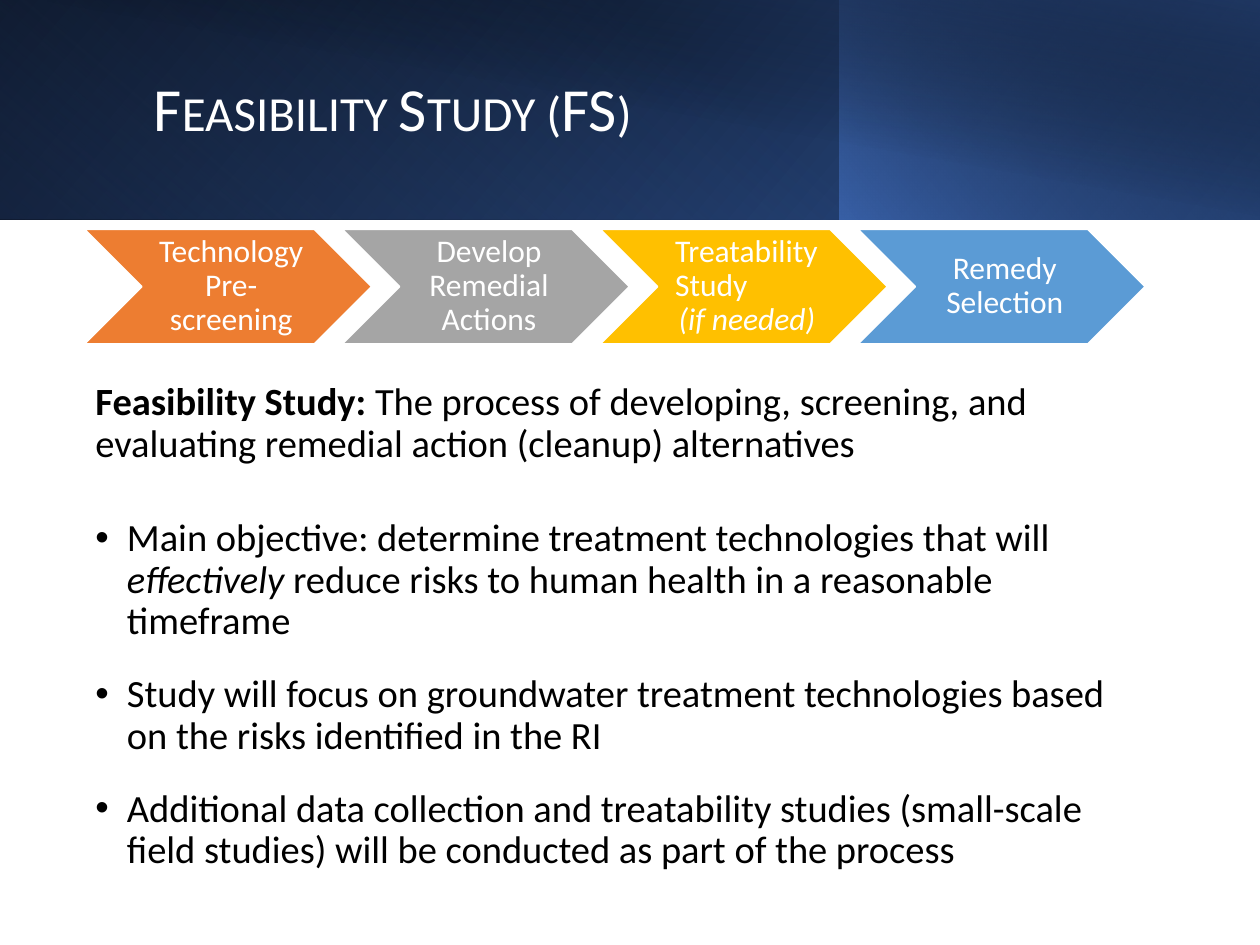
from lxml import etree
from pptx import Presentation
from pptx.dml.color import RGBColor
from pptx.enum.shapes import MSO_SHAPE
from pptx.enum.text import MSO_ANCHOR, MSO_AUTO_SIZE, PP_ALIGN
from pptx.oxml.ns import qn
from pptx.util import Inches, Pt

RECT, CHEVRON = MSO_SHAPE.RECTANGLE, MSO_SHAPE.CHEVRON
MIDDLE, NO_FIT = MSO_ANCHOR.MIDDLE, MSO_AUTO_SIZE.NONE
LEFT, CENTER = PP_ALIGN.LEFT, PP_ALIGN.CENTER

THEME = {
    "font": "Calibri", "white": "FFFFFF", "text": "000000",
    "title": 35, "body": 22, "step": 18,
    "black": "000000", "navy": "203864", "blue": "4472C4", "steel": "2F5597",
}

TITLE = "Feasibility Study (FS)"

# box, angle, stops of (position, colour, opacity)
BANNER = [
    ((0, 0, 10, 1.74), 40, [(0, "black", 100), (100, "steel", 100)]),
    ((0, 0, 6.66, 1.74), 130, [(20, "blue", 0), (100, "navy", 55)]),
    ((6.66, 0, 3.34, 1.74), 320, [(0, "blue", 66), (100, "black", 30)]),
    ((0.38, 0, 9.62, 1.75), 280, [(50, "black", 0), (99, "navy", 52)]),
]

STEPS = [
    ("ED7D31", [("Technology Pre-screening", {})]),
    ("A5A5A5", [("Develop Remedial Actions", {})]),
    ("FFC000", [("Treatability Study", {"align": LEFT, "indent": 0.06}),
                ([("(if needed)", "i")], {})]),
    ("5B9BD5", [("Remedy Selection", {})]),
]

DEFINITION = [
    ("Feasibility Study:", "b"),
    (" The process of developing, screening, and evaluating remedial action "
     "(cleanup) alternatives", ""),
]
BULLETS = [
    [("Main objective: determine treatment technologies that will ", ""),
     ("effectively", "i"),
     (" reduce risks to human health in a reasonable timeframe", "")],
    "Study will focus on groundwater treatment technologies based on the "
    "risks identified in the RI",
    "Additional data collection and treatability studies (small-scale field "
    "studies) will be conducted as part of the process",
]


def write(p, text, size, color, align=LEFT, before=0, after=0, indent=0,
          bullet=False, small_caps=False):
    p.alignment = align
    p.line_spacing = 0.9
    p.space_before, p.space_after = Pt(before), Pt(after)
    pPr = p._p.get_or_add_pPr()
    pPr.set("marL", str(Inches(indent)))
    pPr.set("indent", str(Inches(-indent if bullet else 0)))
    if bullet:
        etree.SubElement(pPr, qn("a:buFont")).set("typeface", "Arial")
        etree.SubElement(pPr, qn("a:buChar")).set("char", "•")
    for words, style in [(text, "")] if isinstance(text, str) else text:
        r = p.add_run()
        r.text = words
        r.font.name, r.font.size = THEME["font"], Pt(size)
        r.font.color.rgb = RGBColor.from_string(color)
        r.font.bold, r.font.italic = "b" in style, "i" in style
        if small_caps:
            r._r.get_or_add_rPr().set("cap", "small")


def write_all(tf, items, **fmt):
    tf.word_wrap, tf.auto_size, tf.vertical_anchor = True, NO_FIT, MIDDLE
    for i, (text, own) in enumerate(items):
        p = tf.paragraphs[0] if i == 0 else tf.add_paragraph()
        write(p, text, **{**fmt, **own})


def add_shape(s, kind, box):
    sp = s.shapes.add_shape(kind, *map(Inches, box))
    sp.shadow.inherit = False
    return sp


def fill_gradient(sp, angle, stops):
    sp.fill.gradient()
    grad = sp._element.spPr.find(qn("a:gradFill"))
    for child in list(grad):
        grad.remove(child)
    gs_list = etree.SubElement(grad, qn("a:gsLst"))
    for pos, color, opacity in stops:
        gs = etree.SubElement(gs_list, qn("a:gs"), pos=str(pos * 1000))
        clr = etree.SubElement(gs, qn("a:srgbClr"), val=THEME[color])
        etree.SubElement(clr, qn("a:alpha"), val=str(opacity * 1000))
    etree.SubElement(grad, qn("a:lin"), ang=str(angle * 60000), scaled="0")


def add_banner(s):
    for box, angle, stops in BANNER:
        sp = add_shape(s, RECT, box)
        sp.line.fill.background()
        fill_gradient(sp, angle, stops)
    title = s.shapes.title
    sp._element.addnext(title._element)
    title.left, title.top, title.width, title.height = map(
        Inches, (1.12, 0.32, 8.12, 1.13))
    write_all(title.text_frame, [(TITLE, {})], size=THEME["title"],
              color=THEME["white"], small_caps=True)


def add_steps(s):
    first, last = 0.67, 6.81
    pitch = (last - first) / (len(STEPS) - 1)
    for i, (color, items) in enumerate(STEPS):
        sp = add_shape(s, CHEVRON, (first + i * pitch, 1.82, 2.28, 0.91))
        sp.fill.solid()
        sp.fill.fore_color.rgb = RGBColor.from_string(color)
        sp.line.color.rgb = RGBColor.from_string(THEME["white"])
        sp.line.width = Pt(1)
        tf = sp.text_frame
        tf.margin_left = Inches(0.08)
        tf.margin_top = tf.margin_right = tf.margin_bottom = Inches(0.03)
        write_all(tf, items, size=THEME["step"], color=THEME["white"],
                  align=CENTER)


def add_body(s):
    tb = s.shapes.add_textbox(*map(Inches, (0.66, 3.12, 8.43, 3.72)))
    items = [(DEFINITION, {"after": 20})]
    items += [(b, {"after": 8, "indent": 0.25, "bullet": True})
              for b in BULLETS]
    write_all(tb.text_frame, items, size=THEME["body"], color=THEME["text"],
              before=10)


def main():
    prs = Presentation()
    prs.slide_width, prs.slide_height = Inches(10), Inches(7.5)
    s = prs.slides.add_slide(prs.slide_layouts[5])
    add_banner(s)
    add_body(s)
    add_steps(s)
    prs.save("out.pptx")


if __name__ == "__main__":
    main()
